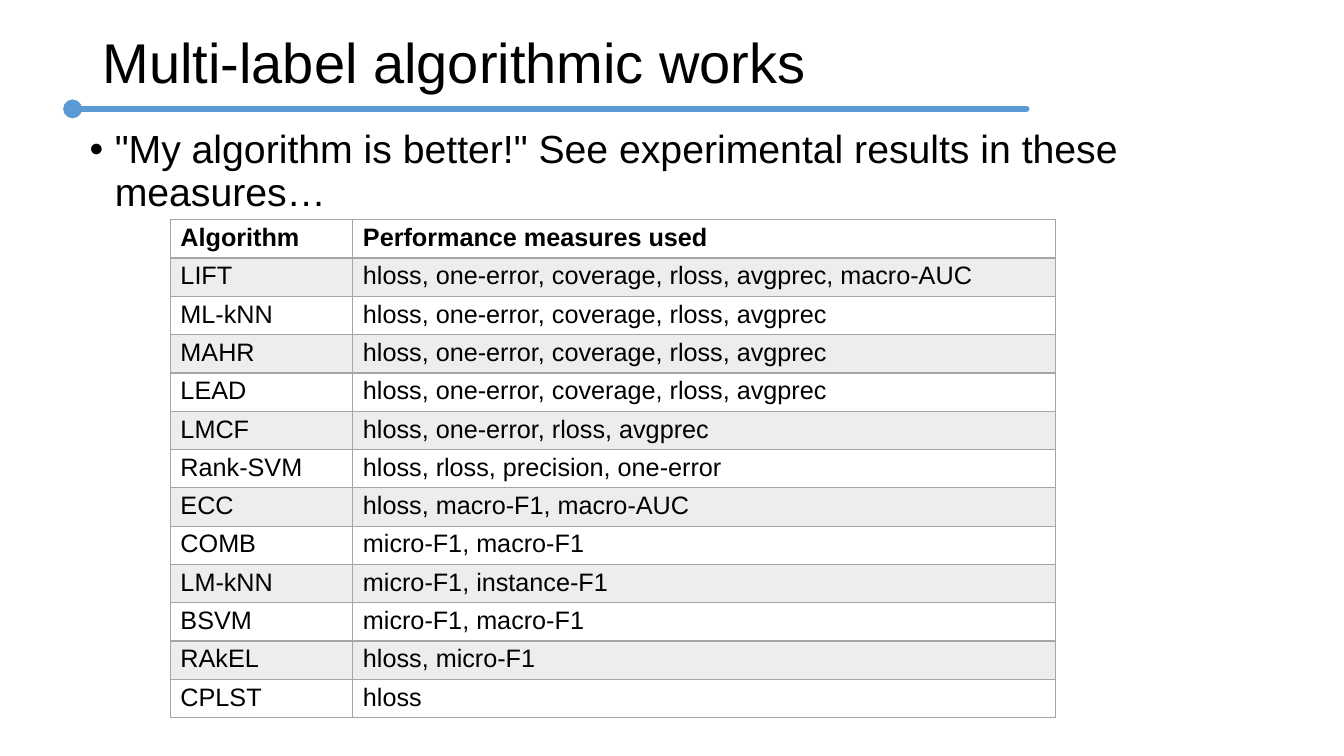
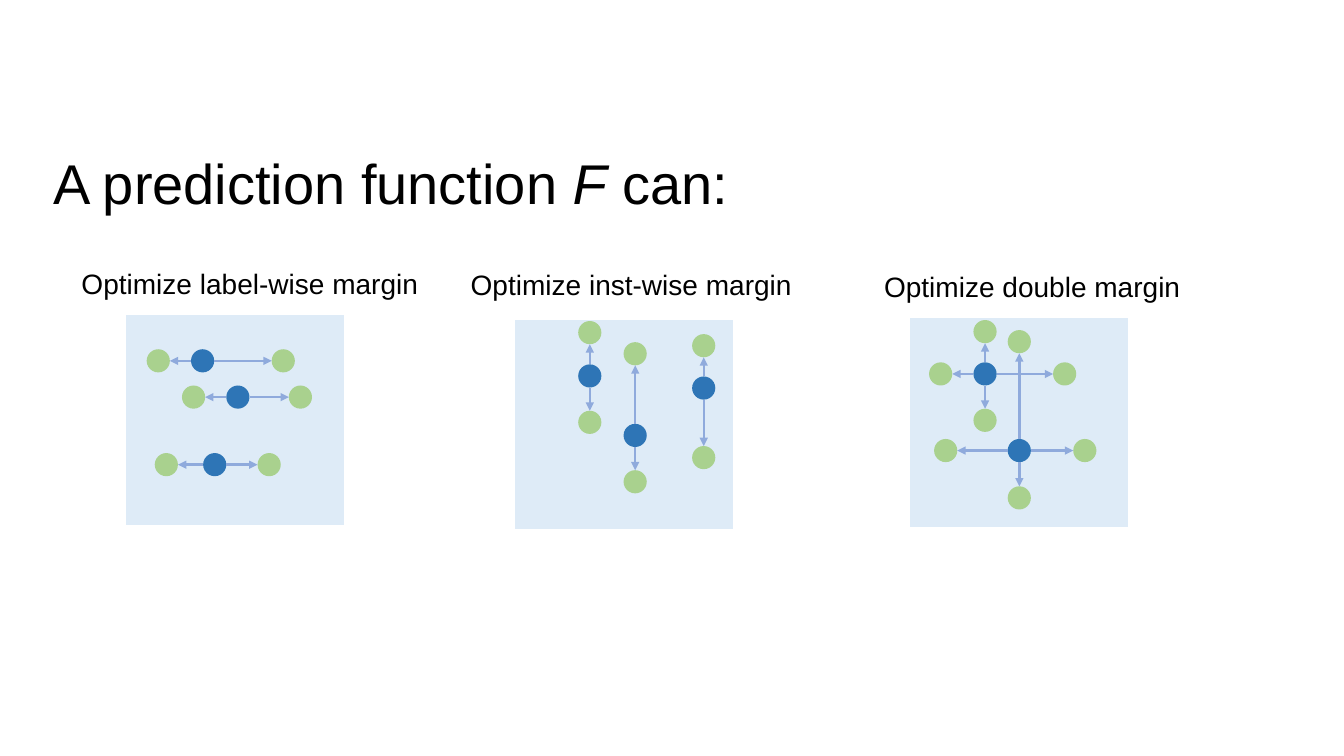
from pptx import Presentation
from pptx.dml.color import RGBColor
from pptx.enum.shapes import MSO_CONNECTOR, MSO_SHAPE
from pptx.enum.text import MSO_ANCHOR
from pptx.oxml.ns import qn
from pptx.util import Inches, Pt
from lxml import etree

LINE = MSO_CONNECTOR.STRAIGHT
BOX, DOT = MSO_SHAPE.FLOWCHART_PROCESS, MSO_SHAPE.OVAL
TOP, MIDDLE = MSO_ANCHOR.TOP, MSO_ANCHOR.MIDDLE

# Shared look
rgb = RGBColor.from_string
BLACK, RULE, GRID, BAND = "000000", "5B9BD5", "A5A5A5", "EDEDED"
PANEL, HUB, LEAF, ARROW = "DEEBF7", "2E75B6", "A9D18E", "8FAADC"
FONT = "Arial"
TITLE = {"size": Pt(40)}
BODY = {"size": Pt(28)}
LABEL = {"size": Pt(20)}
CELL = {"size": Pt(18)}


def write(par, runs, style):
    """Add runs to a paragraph; a run is (text, extra font values)."""
    for words, extra in runs:
        run = par.add_run()
        run.text = words
        run.font.color.rgb = rgb(BLACK)
        for key, val in {"name": FONT, **style, **extra}.items():
            setattr(run.font, key, val)


def link(slide, ends, color, width, **marks):
    """Draw a line with end marks, such as headEnd="oval"."""
    line = slide.shapes.add_connector(LINE, *[Inches(v) for v in ends])
    line.line.color.rgb = rgb(color)
    line.line.width = Pt(width)
    ln = line.line._ln
    for tag, kind in marks.items():
        etree.SubElement(ln, qn("a:" + tag)).set("type", kind)
    etree.SubElement(line._element.spPr, qn("a:effectLst"))
    return ln


deck = Presentation()
deck.slide_width, deck.slide_height = Inches(13.33), Inches(7.5)
blank = deck.slide_layouts[6]
works, margins = [deck.slides.add_slide(blank) for _ in range(2)]

# All text boxes: slide, place, anchor, runs, font, paragraph format
texts = [
    (works, (0.92, -0.08, 11.5, 1.45), MIDDLE,
     [("Multi-label algorithmic works", {})], TITLE, {"line_spacing": 0.9}),
    (works, (0.79, 1.24, 12.42, 0.95), TOP,
     [('"My algorithm is better!" See experimental results in these measures…', {})],
     BODY, {"line_spacing": 0.9, "space_before": Pt(10)}),
    (margins, (0.43, 1.5, 11.5, 0.8), TOP,
     [("A prediction function ", {}), ("F", {"italic": True}), (" can:", {})],
     TITLE, {"line_spacing": 0.9}),
    (margins, (0.71, 2.59, 4.25, 0.44), TOP,
     [("Optimize label-wise margin", {})], LABEL, {}),
    (margins, (4.57, 2.6, 4.25, 0.44), TOP,
     [("Optimize inst-wise margin", {})], LABEL, {}),
    (margins, (8.67, 2.62, 4.25, 0.44), TOP,
     [("Optimize double margin", {})], LABEL, {}),
]
for slide, place, anchor, runs, style, form in texts:
    frame = slide.shapes.add_textbox(*[Inches(v) for v in place]).text_frame
    frame.word_wrap = True
    frame.vertical_anchor = anchor
    par = frame.paragraphs[0]
    write(par, runs, style)
    for key, val in form.items():
        setattr(par, key, val)
    if style is BODY:
        props = par._p.get_or_add_pPr()
        props.set("marL", str(Inches(0.25)))
        props.set("indent", str(-Inches(0.25)))
        etree.SubElement(props, qn("a:buFont")).set("typeface", FONT)
        etree.SubElement(props, qn("a:buChar")).set("char", "•")

# Rule under the title
ln = link(works, (0.72, 1.08, 10.18, 1.08), RULE, 4.5, headEnd="oval")
ln.set("cap", "rnd")

# Table of measures
rows = [
    ("Algorithm", "Performance measures used"),
    ("LIFT", "hloss, one-error, coverage, rloss, avgprec, macro-AUC"),
    ("ML-kNN", "hloss, one-error, coverage, rloss, avgprec"),
    ("MAHR", "hloss, one-error, coverage, rloss, avgprec"),
    ("LEAD", "hloss, one-error, coverage, rloss, avgprec"),
    ("LMCF", "hloss, one-error, rloss, avgprec"),
    ("Rank-SVM", "hloss, rloss, precision, one-error"),
    ("ECC", "hloss, macro-F1, macro-AUC"),
    ("COMB", "micro-F1, macro-F1"),
    ("LM-kNN", "micro-F1, instance-F1"),
    ("BSVM", "micro-F1, macro-F1"),
    ("RAkEL", "hloss, micro-F1"),
    ("CPLST", "hloss"),
]
high = Inches(0.38)
table = works.shapes.add_table(len(rows), 2, Inches(1.69), Inches(2.18),
                               Inches(8.78), high * len(rows)).table
table.first_row = table.horz_banding = False
for col, wide in zip(table.columns, (1.81, 6.97)):
    col.width = Inches(wide)
for i, row in enumerate(rows):
    table.rows[i].height = high
    for j, words in enumerate(row):
        cell = table.cell(i, j)
        cell.margin_top = cell.margin_bottom = Inches(0.04)
        write(cell.text_frame.paragraphs[0], [(words, {"bold": i == 0})], CELL)
        props = cell._tc.get_or_add_tcPr()
        for side in ("lnL", "lnR", "lnT", "lnB"):
            thick = 2 if i == 0 and side == "lnB" else 1
            edge = etree.SubElement(props, qn("a:" + side), w=str(Pt(thick)))
            paint = etree.SubElement(edge, qn("a:solidFill"))
            etree.SubElement(paint, qn("a:srgbClr"), val=GRID)
        if i % 2:
            cell.fill.solid()
            cell.fill.fore_color.rgb = rgb(BAND)
        else:
            cell.fill.background()

# Panels: corner, then hubs as centre in the panel and reach to each leaf
SIZE = 0.23
HALF = SIZE / 2
WAYS = {"left": (-1, 0), "right": (1, 0), "up": (0, -1), "down": (0, 1)}
panels = [
    ((1.25, 3.13), [
        (0.76, 0.45, {"left": 0.44, "right": 0.8}),
        (1.11, 0.81, {"left": 0.44, "right": 0.62}),
        (0.88, 1.48, {"left": 0.48, "right": 0.54}),
    ]),
    ((5.11, 3.17), [
        (0.74, 0.56, {"up": 0.43, "down": 0.46}),
        (1.19, 1.15, {"up": 0.81, "down": 0.46}),
        (1.87, 0.68, {"up": 0.42, "down": 0.69}),
    ]),
    ((9.03, 3.15), [
        (0.74, 0.56, {"left": 0.44, "right": 0.79, "up": 0.42, "down": 0.46}),
        (1.08, 1.32, {"left": 0.73, "right": 0.65, "up": 1.08, "down": 0.47}),
    ]),
]
for (left, top), hubs in panels:
    parts = [(BOX, left, top, 2.16, 2.08, PANEL)]
    arrows = []
    for x, y, reach in hubs:
        x, y = left + x, top + y
        parts.append((DOT, x - HALF, y - HALF, SIZE, SIZE, HUB))
        for way, far in reach.items():
            dx, dy = WAYS[way]
            tip = far - HALF
            parts.append((DOT, x + dx * far - HALF, y + dy * far - HALF,
                          SIZE, SIZE, LEAF))
            arrows.append((x + dx * HALF, y + dy * HALF,
                           x + dx * tip, y + dy * tip))
    for kind, *place, color in parts:
        shape = margins.shapes.add_shape(kind, *[Inches(v) for v in place])
        shape.shadow.inherit = False
        shape.fill.solid()
        shape.fill.fore_color.rgb = rgb(color)
        shape.line.fill.background()
    for ends in arrows:
        link(margins, ends, ARROW, 1.75, tailEnd="triangle")

deck.save("out.pptx")
